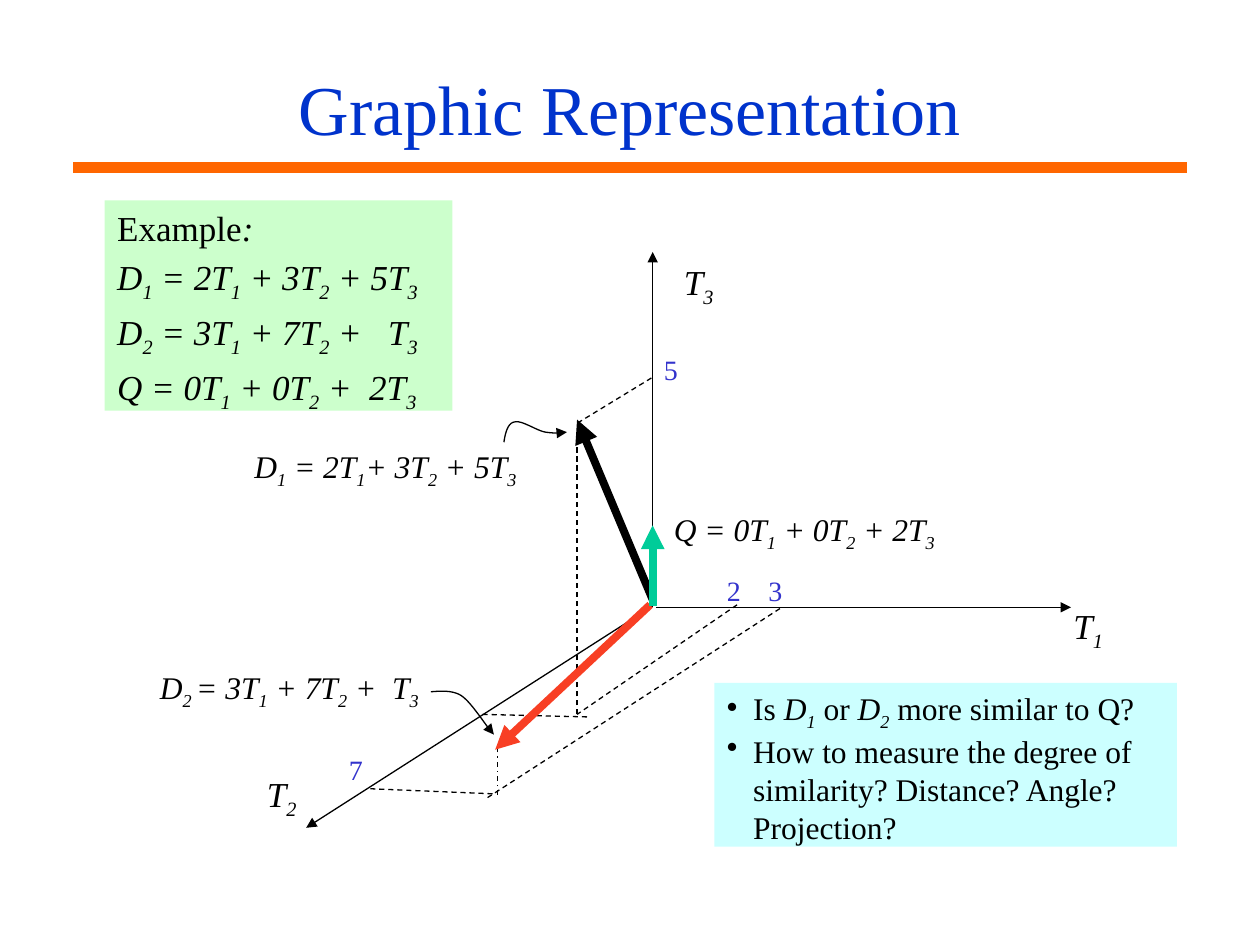
from lxml import etree
from pptx import Presentation
from pptx.dml.color import RGBColor
from pptx.enum.dml import MSO_LINE
from pptx.enum.shapes import MSO_CONNECTOR, MSO_SHAPE
from pptx.enum.text import MSO_ANCHOR, MSO_AUTO_SIZE, PP_ALIGN
from pptx.oxml.ns import qn
from pptx.util import Inches, Pt

FONT = "Times New Roman"
BLACK = RGBColor(0x00, 0x00, 0x00)
TITLE_BLUE = RGBColor(0x00, 0x33, 0xCC)
NUMBER_BLUE = RGBColor(0x33, 0x33, 0xCC)
ORANGE = RGBColor(0xFF, 0x66, 0x00)
RED = RGBColor(0xF8, 0x3F, 0x24)
GREEN = RGBColor(0x00, 0xCC, 0x99)
PALE_GREEN = RGBColor(0xCC, 0xFF, 0xCC)
PALE_CYAN = RGBColor(0xCC, 0xFF, 0xFF)
DASH, DASH_DOT = MSO_LINE.DASH, MSO_LINE.DASH_DOT
THIN, THICK, RULE = 0.75, 4.5, 6

TITLE = "Graphic Representation"
EXAMPLE = [
    "Example*:*",
    "*D_1 = 2T_1 + 3T_2 + 5T_3*",
    "*D_2 = 3T_1 + 7T_2 +   T_3*",
    "*Q = 0T_1 + 0T_2 +  2T_3*",
]
QUESTIONS = [
    "Is *D_1* or *D_2* more similar to Q?",
    "How to measure the degree of similarity? Distance? Angle? Projection?",
]
AXES = [
    ((5.21, 4.82), (8.5, 4.82)),
    ((5.18, 4.81), (2.43, 6.57)),
    ((5.18, 4.81), (5.18, 2)),
]
GUIDES = [
    ((5.85, 4.8), (4.58, 5.67), DASH),
    ((3.83, 5.67), (4.66, 5.69), DASH),
    ((4.58, 5.67), (4.58, 3.5), DASH),
    ((6.19, 4.83), (3.87, 6.33), DASH),
    ((3.91, 6.3), (2.94, 6.26), DASH),
    ((3.95, 6.31), (3.95, 5.92), DASH_DOT),
    ((5.17, 3), (4.58, 3.36), DASH),
]
VECTORS = [
    ((5.18, 4.76), (4.58, 3.33), BLACK),
    ((5.16, 4.8), (3.93, 5.95), RED),
    ((5.18, 4.81), (5.18, 4.17), GREEN),
]
POINTERS = [
    [(4, 3.51), (4.01, 3.44), (4.03, 3.36), (4.08, 3.35), (4.14, 3.33),
     (4.26, 3.42), (4.33, 3.43), (4.4, 3.44), (4.45, 3.44), (4.5, 3.43)],
    [(3.42, 5.49), (3.46, 5.49), (3.58, 5.47), (3.66, 5.52),
     (3.75, 5.58), (3.86, 5.77), (3.92, 5.83)],
]
LABEL_STYLES = [
    (20, BLACK, 0.45, 0.43, [("*T_3*", 5.33, 2.02), ("*T_1*", 8.42, 4.75), ("*T_2*", 2.02, 6.08)]),
    (18, BLACK, 2.3, 0.4, [
        ("*D_1 = 2T_1+ 3T_2 + 5T_3*", 1.92, 3.5),
        ("*D_2_ = 3T_1 + 7T_2 +  T_3*", 1.17, 5.25),
        ("*Q = 0T_1 + 0T_2 + 2T_3*", 5.25, 4),
    ]),
    (16, NUMBER_BLUE, 0.31, 0.37, [
        ("7", 2.67, 5.92), ("3", 6, 4.5), ("2", 5.67, 4.5), ("5", 5.17, 2.75),
    ]),
]


def add_run(p, text, size, color, italic=False, sub=False):
    if not text:
        return
    r = p.add_run()
    r.text = text
    r.font.name, r.font.size, r.font.italic = FONT, Pt(size), italic
    r.font.color.rgb = color
    if sub:
        r.font._element.set("baseline", "-25000")


def write(p, markup, size, color=BLACK):
    for i, part in enumerate(markup.split("*")):
        italic = i % 2 == 1
        first, *rest = part.split("_")
        add_run(p, first, size, color, italic)
        for piece in rest:
            add_run(p, piece[0], size, color, italic, True)
            add_run(p, piece[1:], size, color, italic)


def write_all(tf, lines, size, indent, bullet=None):
    tf.word_wrap, tf.auto_size = True, MSO_AUTO_SIZE.NONE
    tf.vertical_anchor = MSO_ANCHOR.TOP
    for i, line in enumerate(lines):
        p = tf.paragraphs[0] if i == 0 else tf.add_paragraph()
        p.alignment = PP_ALIGN.LEFT
        pPr = p._p.get_or_add_pPr()
        pPr.set("marL", str(Inches(indent)))
        pPr.set("indent", str(-Inches(indent)))
        if bullet:
            etree.SubElement(pPr, qn("a:buChar")).set("char", bullet)
        else:
            etree.SubElement(pPr, qn("a:buNone"))
        write(p, line, size)


def place(sp, left, top, width, height):
    sp.left, sp.top, sp.width, sp.height = map(Inches, (left, top, width, height))


def style_line(sp, color, width, arrow=True, dash=None):
    sp.line.color.rgb, sp.line.width = color, Pt(width)
    if dash:
        sp.line.dash_style = dash
    if arrow:
        etree.SubElement(sp.line._get_or_add_ln(), qn("a:tailEnd")).set("type", "triangle")


def add_line(s, start, end, color=BLACK, width=THIN, arrow=True, dash=None):
    ends = map(Inches, (*start, *end))
    c = s.shapes.add_connector(MSO_CONNECTOR.STRAIGHT, *ends)
    style_line(c, color, width, arrow, dash)
    etree.SubElement(c._element.spPr, qn("a:effectLst"))


def bezier(a, b, c, d, steps=12):
    for i in range(1, steps + 1):
        t = i / steps
        u = 1 - t
        yield tuple(u**3 * w + 3 * u * u * t * x + 3 * u * t * t * y + t**3 * z
                    for w, x, y, z in zip(a, b, c, d))


def add_curve(s, points):
    points = [(Inches(x), Inches(y)) for x, y in points]
    builder = s.shapes.build_freeform(*points[0])
    for i in range(0, len(points) - 1, 3):
        builder.add_line_segments(list(bezier(*points[i:i + 4])), close=False)
    sp = builder.convert_to_shape()
    sp.fill.background()
    sp.shadow.inherit = False
    style_line(sp, BLACK, THIN)


def main():
    prs = Presentation()
    prs.slide_width, prs.slide_height = Inches(10), Inches(7.5)
    s = prs.slides.add_slide(prs.slide_layouts[1])
    title, body = s.placeholders
    add_line(s, (0.58, 1.33), (9.42, 1.33), ORANGE, RULE, arrow=False)

    place(title, 0.75, 0.38, 8.5, 0.95)
    title.text_frame.vertical_anchor = MSO_ANCHOR.MIDDLE
    title.text_frame.paragraphs[0].alignment = PP_ALIGN.CENTER
    write(title.text_frame.paragraphs[0], TITLE, 40, TITLE_BLUE)

    place(body, 0.83, 1.59, 2.76, 1.67)
    body.fill.solid()
    body.fill.fore_color.rgb = PALE_GREEN
    write_all(body.text_frame, EXAMPLE, 20, 0.38)

    for start, end in AXES:
        add_line(s, start, end)
    for start, end, dash in GUIDES:
        add_line(s, start, end, arrow=False, dash=dash)
    for start, end, color in VECTORS:
        add_line(s, start, end, color, THICK)
    for points in POINTERS:
        add_curve(s, points)
    for size, color, width, height, labels in LABEL_STYLES:
        for text, left, top in labels:
            box = s.shapes.add_textbox(*map(Inches, (left, top, width, height)))
            box.text_frame.word_wrap = False
            write(box.text_frame.paragraphs[0], text, size, color)

    panel = s.shapes.add_shape(MSO_SHAPE.RECTANGLE, *map(Inches, (5.67, 5.42, 3.67, 1.3)))
    panel.shadow.inherit = False
    panel.fill.solid()
    panel.fill.fore_color.rgb = PALE_CYAN
    panel.line.fill.background()
    write_all(panel.text_frame, QUESTIONS, 18, 0.21, "•")
    prs.save("out.pptx")


if __name__ == "__main__":
    main()
